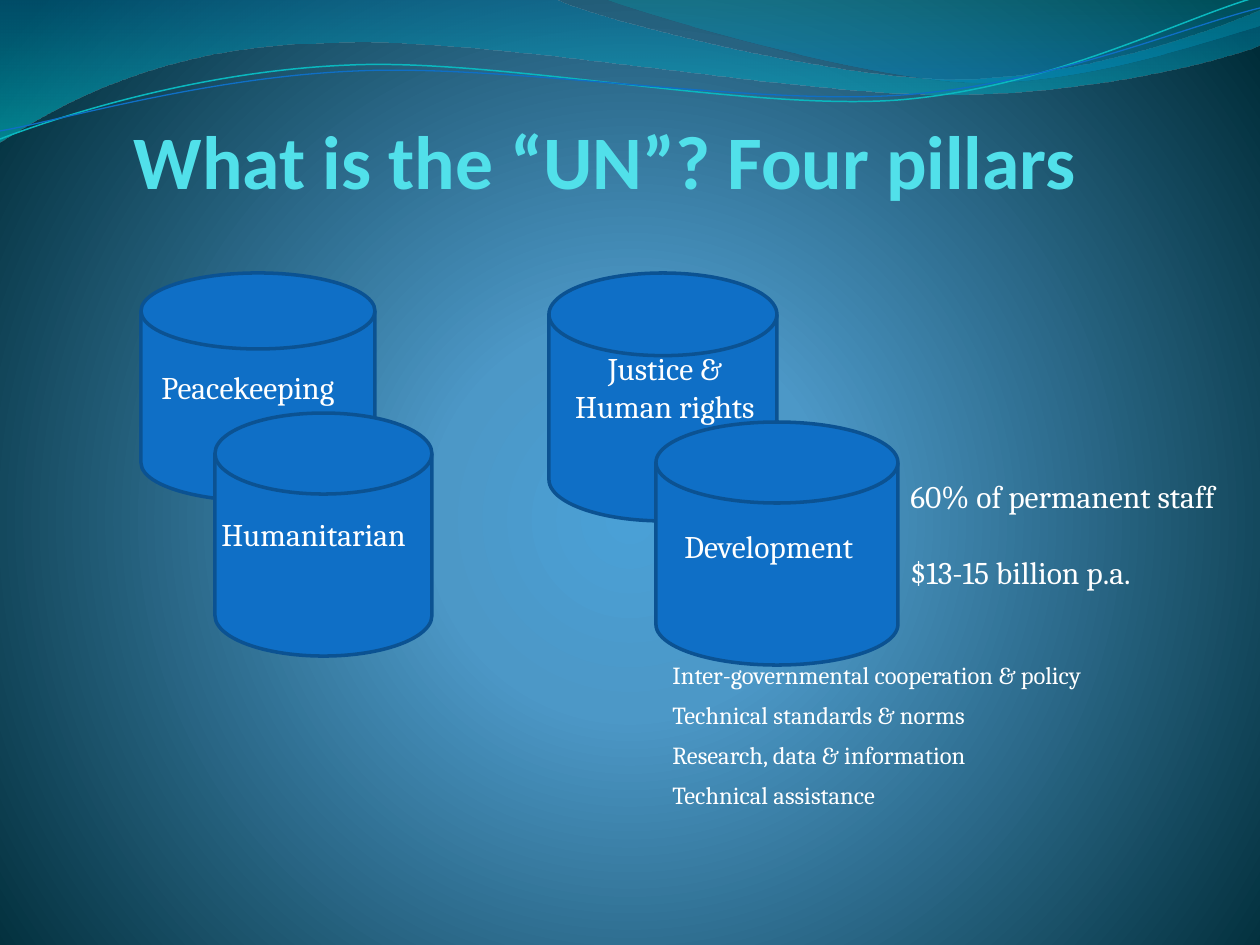
from lxml.etree import SubElement
from pptx import Presentation
from pptx.dml.color import RGBColor
from pptx.enum.shapes import MSO_SHAPE
from pptx.enum.text import MSO_ANCHOR, PP_ALIGN
from pptx.oxml.ns import qn
from pptx.util import Pt

PX = 914400 / 126

WHITE = RGBColor(0xFF, 0xFF, 0xFF)
AQUA = RGBColor(0x51, 0xE0, 0xEA)
TEAL = RGBColor(0x0A, 0xB8, 0xBF)
BLUE = RGBColor(0x0F, 0x6F, 0xC6)
DARK_BLUE = RGBColor(0x0B, 0x52, 0x92)


def set_gradient(parent, stops):
    """Replace the solid fill of parent by stops of (percent, colour, opacity)."""
    solid = parent.find(qn("a:solidFill"))
    gradient = parent.makeelement(qn("a:gradFill"), {"rotWithShape": "1"})
    parent.replace(solid, gradient)
    stop_list = SubElement(gradient, qn("a:gsLst"))
    for percent, colour, opacity in stops:
        stop = SubElement(stop_list, qn("a:gs"), pos=str(percent * 1000))
        color = SubElement(stop, qn("a:srgbClr"), val=colour)
        if opacity < 100:
            SubElement(color, qn("a:alpha"), val=str(opacity * 1000))
    return gradient


def add_curve(start, segments, close):
    """Draw lines (x, y) and Bezier curves (x1, y1, x2, y2, x, y), in px."""
    points = [start]
    for segment in segments:
        points += zip(segment[::2], segment[1::2])
    emu = [(round(x * PX), round(y * PX)) for x, y in points]
    builder = slide.shapes.build_freeform(*emu[0])
    builder.add_line_segments(emu[1:], close=close)
    shape = builder.convert_to_shape()
    shape.shadow.inherit = False
    steps = iter(list(shape._element.iter(qn("a:lnTo"))))
    for segment in segments:
        step = next(steps)
        if len(segment) == 6:
            curve = step.makeelement(qn("a:cubicBezTo"), {})
            step.addprevious(curve)
            for part in (step, next(steps), next(steps)):
                curve.append(part[0])
                part.getparent().remove(part)
    return shape


presentation = Presentation()
presentation.slide_width = round(1260 * PX)
presentation.slide_height = round(945 * PX)
slide = presentation.slides.add_slide(presentation.slide_layouts[6])

# Radial background
slide.background.fill.solid()
background = slide.background.fill._xPr
gradient = set_gradient(background, [(0, "4AA0D6", 100), (25, "4C98C7", 100), (100, "002C38", 100)])
circle = SubElement(gradient, qn("a:path"), {"path": "circle"})
SubElement(circle, qn("a:fillToRect"), l="10000", t="110000", r="10000", b="100000")

# Waves along the top
bands = [
    ((0, 0),
     [(554, -1), (600, 21, 837, 79, 955, 79), (1075, 79, 1207, 33, 1260, 11),
      (1261, 45), (1239, 55, 1096, 96, 940, 94), (784, 94, 481, 35, 324, 43),
      (163, 45, 58, 105, -1, 142), (0, 0)],
     [(0, "0074A1", 45), (100, "00C6CF", 55)]),
    ((604, -1),
     [(642, 14, 859, 78, 969, 82), (1079, 86, 1211, 40, 1260, 26), (1260, 0), (604, -1)],
     [(0, "00A1A9", 30), (80, "008BBF", 45)]),
]
for start, segments, stops in bands:
    band = add_curve(start, segments, close=True)
    band.line.fill.background()
    band.fill.solid()
    gradient = set_gradient(band._element.spPr, stops)
    SubElement(gradient, qn("a:lin"), ang="5400000", scaled="1")

wave_lines = [
    ((0, 139),
     [(60, 116, 199, 71, 349, 65), (498, 58, 747, 111, 898, 100),
      (1050, 88, 1182, 18, 1257, -3)], TEAL, 0.85),
    ((0, 131),
     [(59, 121, 207, 77, 357, 71), (508, 64, 751, 106, 903, 95),
      (1053, 84, 1186, 26, 1260, 8)], BLUE, 0.75),
]
for start, segments, color, width in wave_lines:
    wave = add_curve(start, segments, close=False)
    wave.fill.background()
    wave.line.color.rgb = color
    wave.line.width = Pt(width)

# Title
title = slide.shapes.add_textbox(*(round(v * PX) for v in (83, 45, 1082, 160)))
frame = title.text_frame
frame.word_wrap = True
frame.vertical_anchor = MSO_ANCHOR.BOTTOM
frame.margin_top = frame.margin_right = frame.margin_bottom = 0
frame.margin_left = round(51 * PX)
paragraph = frame.paragraphs[0]
paragraph.text = "What is the “UN”? Four pillars"
paragraph.font.name = "Calibri"
paragraph.font.size = Pt(43.2)
paragraph.font.bold = True
paragraph.font.color.rgb = AQUA

# Pillars
pillars = [(141, 273, 234, 228), (215, 413, 217, 243),
           (549, 273, 228, 248), (656, 422, 242, 243)]
for box in pillars:
    pillar = slide.shapes.add_shape(MSO_SHAPE.FLOWCHART_MAGNETIC_DISK, *(round(v * PX) for v in box))
    pillar.shadow.inherit = False
    pillar.fill.solid()
    pillar.fill.fore_color.rgb = BLUE
    pillar.line.color.rgb = DARK_BLUE
    pillar.line.width = Pt(2)

# Labels and notes: box, lines, size, alignment, indent, space before first and later lines
labels = [
    ((209, 509, 228, 50), ["Humanitarian"], 18, PP_ALIGN.LEFT, 0, 0, 0),
    ((672, 521, 232, 50), ["Development"], 18, PP_ALIGN.LEFT, 0, 0, 0),
    ((551, 343, 228, 89), ["Justice &", "Human rights"], 18, PP_ALIGN.CENTER, 0, 0, 0),
    ((149, 362, 218, 50), ["Peacekeeping"], 18, PP_ALIGN.LEFT, 0, 0, 0),
    ((898, 471, 345, 127), ["60% of permanent staff", "$13-15 billion p.a."],
     18, PP_ALIGN.LEFT, 0, 0, 21.7),
    ((471, 654, 674, 164),
     ["Inter-governmental cooperation & policy", "Technical standards & norms",
      "Research, data & information", "Technical assistance"],
     14, PP_ALIGN.LEFT, 189, 6, 6),
]
for box, lines, size, alignment, indent, first_space, later_space in labels:
    frame = slide.shapes.add_textbox(*(round(v * PX) for v in box)).text_frame
    frame.word_wrap = True
    for index, line in enumerate(lines):
        paragraph = frame.add_paragraph() if index else frame.paragraphs[0]
        paragraph.text = line
        paragraph.alignment = alignment
        paragraph.space_before = Pt(later_space if index else first_space)
        paragraph.font.name = "Cambria"
        paragraph.font.size = Pt(size)
        paragraph.font.color.rgb = WHITE
        if indent:
            paragraph.level = 3
            paragraph._p.get_or_add_pPr().set("marL", str(round(indent * PX)))

presentation.save("out.pptx")
